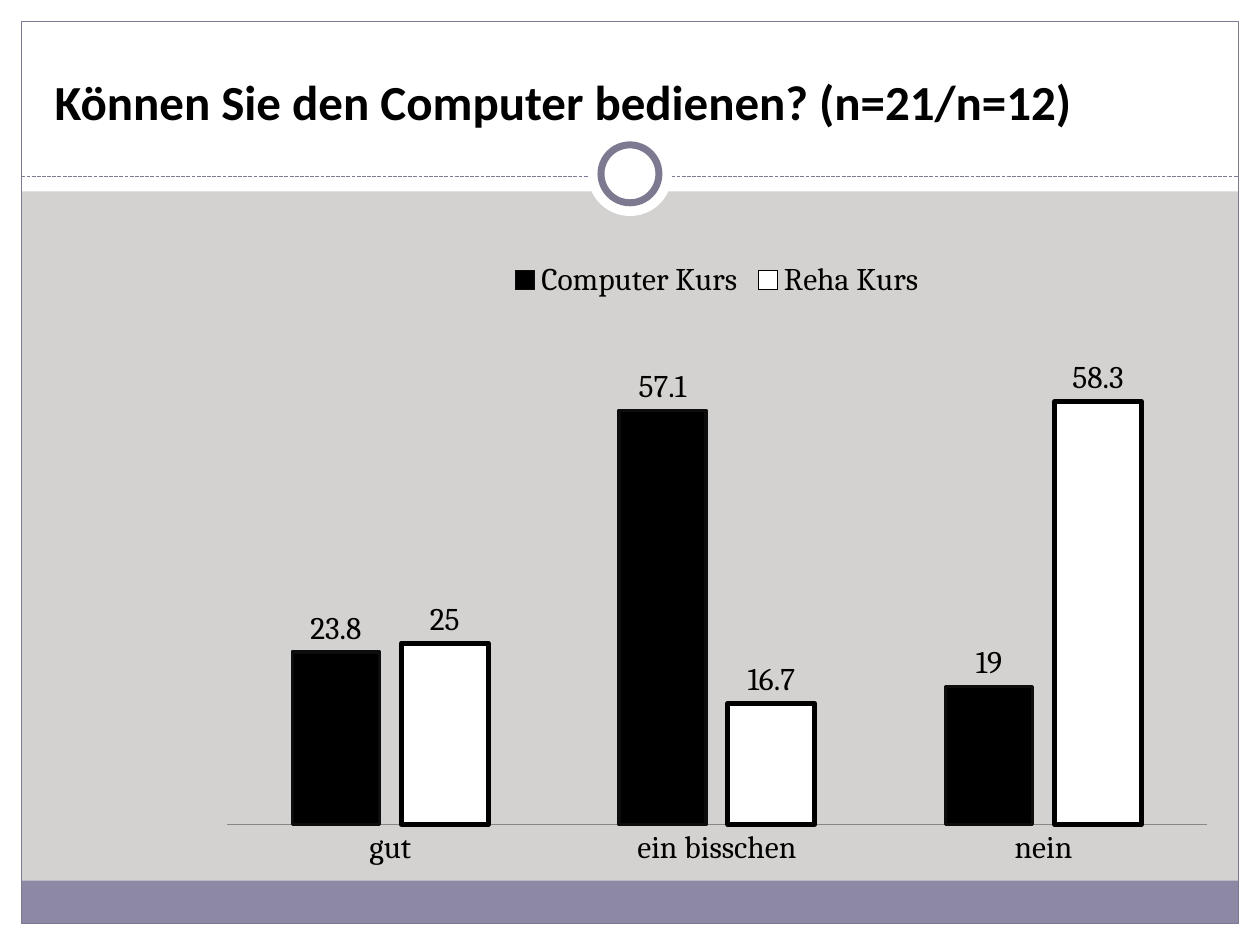
from pptx import Presentation
from pptx import util as u
from pptx.chart import data
from pptx.dml import color
from pptx.enum import chart as ch, dml, shapes, text
from pptx.oxml import xmlchemy as xml

BLACK = color.RGBColor(0x00, 0x00, 0x00)
SOFT = color.RGBColor(0x0D, 0x0D, 0x0D)
WHITE = color.RGBColor(0xFF, 0xFF, 0xFF)
GREY = color.RGBColor(0xD4, 0xD2, 0xD0)
AXIS = color.RGBColor(0x86, 0x86, 0x86)
MAUVE = color.RGBColor(0x8D, 0x89, 0xA4)
SLATE = color.RGBColor(0x7C, 0x79, 0x91)
WIDE, HIGH = u.Inches(10), u.Inches(7.5)
EDGE = u.Inches(0.17)


def paint(item, fill=None, line=None, width=0.75):
    """Set the fill and the outline of a shape or series; None leaves it empty."""
    if fill is None:
        item.fill.background()
    else:
        item.fill.solid()
        item.fill.fore_color.rgb = fill
    if line is None:
        item.line.fill.background()
    else:
        item.line.color.rgb = line
        item.line.width = u.Pt(width)


def add_form(slide, box, kind=shapes.MSO_SHAPE.RECTANGLE, **look):
    """Add a flat preset shape in the given box."""
    form = slide.shapes.add_shape(kind, *box)
    form.shadow.inherit = False
    paint(form, **look)


def add_frame(slide, box, head):
    """Draw white margins around the box, the head band, the foot bar and the outline."""
    left, top, wide, high = box
    right, base = left + wide, top + high
    bar = u.Inches(0.34)
    for band in ((0, base, WIDE, HIGH - base), (0, 0, WIDE, head),
                 (0, 0, left, HIGH), (right, 0, WIDE - right, HIGH)):
        add_form(slide, band, fill=WHITE)
    add_form(slide, (left, base - bar, wide, bar), fill=MAUVE)
    add_form(slide, box, line=SLATE)


def add_rule(slide, left, right, level):
    """Draw the dashed rule with a ring at its middle."""
    rule = slide.shapes.add_connector(
        shapes.MSO_CONNECTOR.STRAIGHT, left, level, right, level)
    rule.line.color.rgb = SLATE
    rule.line.width = u.Pt(0.75)
    rule.line.dash_style = dml.MSO_LINE.SQUARE_DOT
    rule._element.spPr.append(xml.OxmlElement("a:effectLst"))
    mid, core = (left + right) // 2, level - u.Inches(0.02)
    for size, line in ((0.67, None), (0.46, SLATE)):
        side = u.Inches(size)
        add_form(slide, (mid - side // 2, core - side // 2, side, side),
                 shapes.MSO_SHAPE.OVAL, fill=WHITE, line=line, width=4)


def set_title(slide, box, words):
    """Place the title in the box, in front of the head band."""
    title = slide.shapes.title
    slide.shapes._spTree.append(title._element)
    title.left, title.top, title.width, title.height = box
    frame = title.text_frame
    frame.text = words
    frame.word_wrap = True
    frame.auto_size = text.MSO_AUTO_SIZE.NONE
    frame.vertical_anchor = text.MSO_ANCHOR.BOTTOM
    line = frame.paragraphs[0]
    line.alignment = text.PP_ALIGN.LEFT
    font = line.runs[0].font
    font.name, font.size, font.bold = "Calibri", u.Pt(28), True
    font.color.rgb = BLACK


def add_bars(slide, box, cats, rows):
    """Add the clustered columns in the box; each row is name, values and look."""
    source = data.CategoryChartData()
    source.categories = cats
    for name, vals, look in rows:
        source.add_series(name, vals)
    chart = slide.shapes.add_chart(
        ch.XL_CHART_TYPE.COLUMN_CLUSTERED, *box, source).chart
    chart.has_title = False
    chart.font.name, chart.font.size = "Cambria", u.Pt(18)
    chart.font.color.rgb = BLACK
    chart.has_legend = True
    chart.legend.position = ch.XL_LEGEND_POSITION.TOP
    chart.legend.include_in_layout = False
    base, scale = chart.category_axis, chart.value_axis
    base.major_tick_mark = ch.XL_TICK_MARK.NONE
    base.format.line.color.rgb = AXIS
    scale.visible = False
    scale.has_major_gridlines = False
    scale.minimum_scale, scale.maximum_scale = 0, 70
    plot = chart.plots[0]
    plot.gap_width, plot.overlap = 150, -25
    plot.vary_by_categories = False
    for bars, (name, vals, look) in zip(plot.series, rows):
        bars.invert_if_negative = False
        paint(bars.format, **look)
        tags = bars.data_labels
        tags.show_value = True
        tags.position = ch.XL_LABEL_POSITION.OUTSIDE_END


def main():
    """Build the slide and save it."""
    deck = Presentation()
    deck.slide_width, deck.slide_height = WIDE, HIGH
    slide = deck.slides.add_slide(deck.slide_layouts[5])
    back = slide.background.fill
    back.solid()
    back.fore_color.rgb = GREY
    add_frame(slide, (EDGE, EDGE, WIDE - 2 * EDGE, HIGH - 2 * EDGE), u.Inches(1.52))
    add_rule(slide, EDGE, WIDE - EDGE, u.Inches(1.4))
    set_title(slide, (WIDE // 30, HIGH // 30, WIDE * 14 // 15, HIGH // 9),
              "Können Sie den Computer bedienen? (n=21/n=12)")
    add_bars(slide, (int(WIDE * 0.164), int(HIGH * 0.26), int(WIDE * 0.81), int(HIGH * 0.67)),
             ("gut", "ein bisschen", "nein"),
             (("Computer Kurs", (23.8, 57.1, 19), dict(fill=BLACK, line=SOFT, width=2)),
              ("Reha Kurs", (25, 16.7, 58.3), dict(fill=WHITE, line=BLACK, width=2.75))))
    deck.save("out.pptx")


if __name__ == "__main__":
    main()
